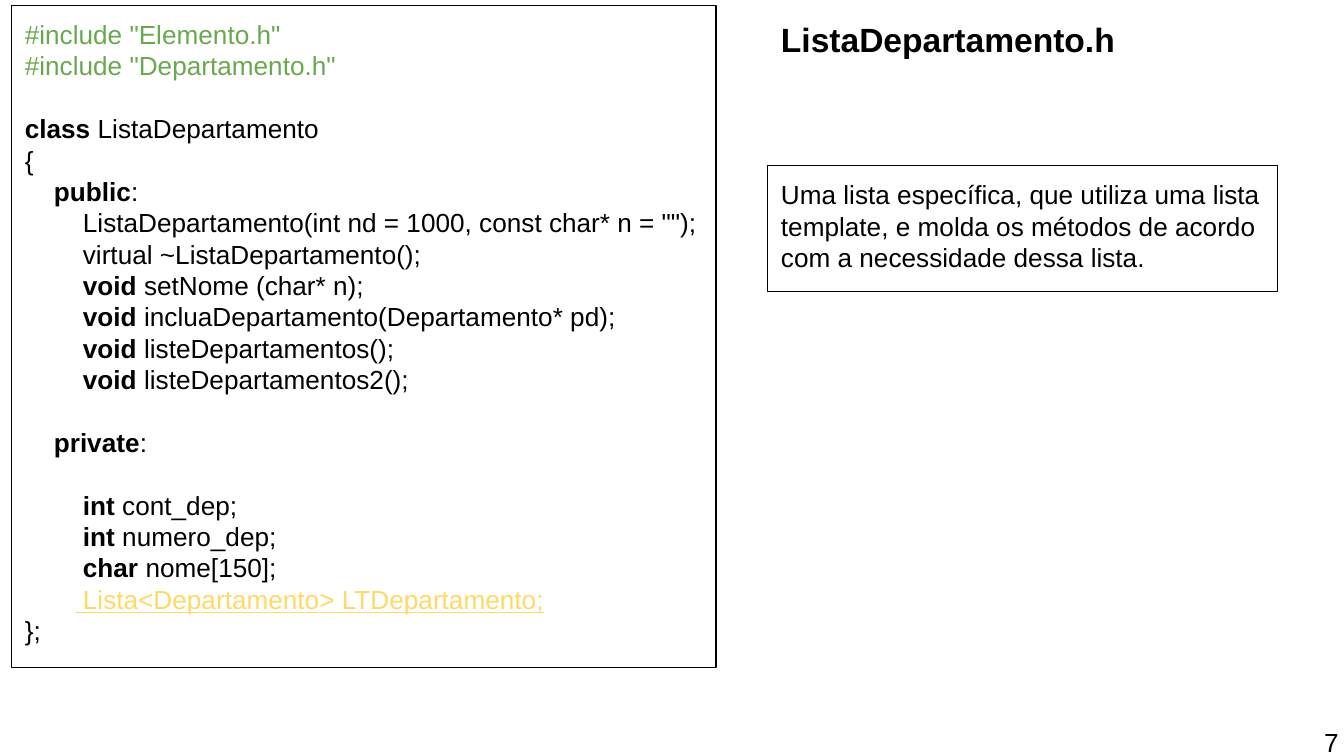
from dataclasses import dataclass

import pptx
import pptx.dml.color
import pptx.enum.shapes
import pptx.enum.text
import pptx.util

Cm = pptx.util.Cm
Pt = pptx.util.Pt
RGB = pptx.dml.color.RGBColor
ANCHOR = pptx.enum.text.MSO_ANCHOR
ALIGN = pptx.enum.text.PP_ALIGN


@dataclass(frozen=True)
class Theme:
    font: str = "Arial"
    ink: RGB = RGB(0x00, 0x00, 0x00)
    include: RGB = RGB(0x6A, 0xA8, 0x4F)
    highlight: RGB = RGB(0xFF, 0xD9, 0x66)
    body: Pt = Pt(14)
    title: Pt = Pt(18)
    border: Pt = Pt(0.75)
    blank_line: Pt = Pt(16.8)
    inset: Cm = Cm(0.25)
    space: Pt = Pt(3.89)


THEME = Theme()

CODE = [
    (0, "", '#include "Elemento.h"', False),
    (0, "", '#include "Departamento.h"', False),
    (0, "class ", "ListaDepartamento", True),
    (0, "", "{", False),
    (4, "public", ":", False),
    (8, "", 'ListaDepartamento(int nd = 1000, const char* n = "");', False),
    (8, "", "virtual ~ListaDepartamento();", False),
    (8, "void ", "setNome (char* n);", False),
    (8, "void ", "incluaDepartamento(Departamento* pd);", False),
    (8, "void ", "listeDepartamentos();", False),
    (8, "void ", "listeDepartamentos2();", False),
    (4, "private", ":", True),
    (8, "int ", "cont_dep;", True),
    (8, "int ", "numero_dep;", False),
    (8, "char ", "nome[150];", False),
    (7, "", " Lista<Departamento> LTDepartamento;", False),
    (0, "", "};", False),
]


def set_frame(sp, anchor=ANCHOR.TOP):
    tf = sp.text_frame
    tf.word_wrap = True
    tf.vertical_anchor = anchor
    tf.margin_left = tf.margin_right = THEME.inset
    tf.margin_top = tf.margin_bottom = THEME.inset
    return tf


def set_font(p, color=THEME.ink, size=THEME.body, bold=None):
    p.font.name = THEME.font
    p.font.size = size
    p.font.color.rgb = color
    p.font.bold = bold


def add_frame(s, box):
    sp = s.shapes.add_shape(pptx.enum.shapes.MSO_SHAPE.RECTANGLE, *box)
    sp.shadow.inherit = False
    sp.fill.background()
    sp.line.color.rgb = THEME.ink
    sp.line.width = THEME.border
    return set_frame(sp)


def add_code(s, box):
    tf = add_frame(s, box)
    for i, (indent, keyword, rest, gap) in enumerate(CODE):
        p = tf.paragraphs[0] if i == 0 else tf.add_paragraph()
        p.alignment = ALIGN.LEFT
        pPr = p._p.get_or_add_pPr()
        pPr.set("marL", str(int(indent * THEME.space)))
        pPr.set("indent", "0")
        if gap:
            p.space_before = THEME.blank_line
        if keyword:
            r = p.add_run()
            r.text = keyword
            r.font.bold = True
        p.add_run().text = rest
        if rest.startswith("#include"):
            set_font(p, THEME.include)
        elif "Lista<" in rest:
            set_font(p, THEME.highlight)
            p.font.underline = True
        else:
            set_font(p)


def add_note(s, box, text):
    p = add_frame(s, box).paragraphs[0]
    p.text = text
    p.alignment = ALIGN.LEFT
    set_font(p)


def add_title(s, box, text):
    p = set_frame(s.shapes.add_textbox(*box)).paragraphs[0]
    p.text = text
    set_font(p, size=THEME.title, bold=True)


def add_page_number(s, box, text):
    p = set_frame(s.shapes.add_textbox(*box), ANCHOR.MIDDLE).paragraphs[0]
    p.text = text
    p.alignment = ALIGN.RIGHT
    set_font(p)


def main():
    prs = pptx.Presentation()
    prs.slide_width = Cm(25.4)
    prs.slide_height = Cm(14.29)
    s = prs.slides.add_slide(prs.slide_layouts[6])
    add_code(s, (Cm(0.22), Cm(0.1), Cm(13.31), Cm(12.52)))
    add_title(s, (Cm(14.51), Cm(0.1), Cm(7.62), Cm(2.39)), "ListaDepartamento.h")
    add_note(
        s,
        (Cm(14.51), Cm(3.13), Cm(9.63), Cm(2.38)),
        "Uma lista específica, que utiliza uma lista template, "
        "e molda os métodos de acordo com a necessidade dessa lista.",
    )
    add_page_number(s, (Cm(19.63), Cm(13.36), Cm(5.92), Cm(1.32)), "7")
    prs.save("out.pptx")


if __name__ == "__main__":
    main()
